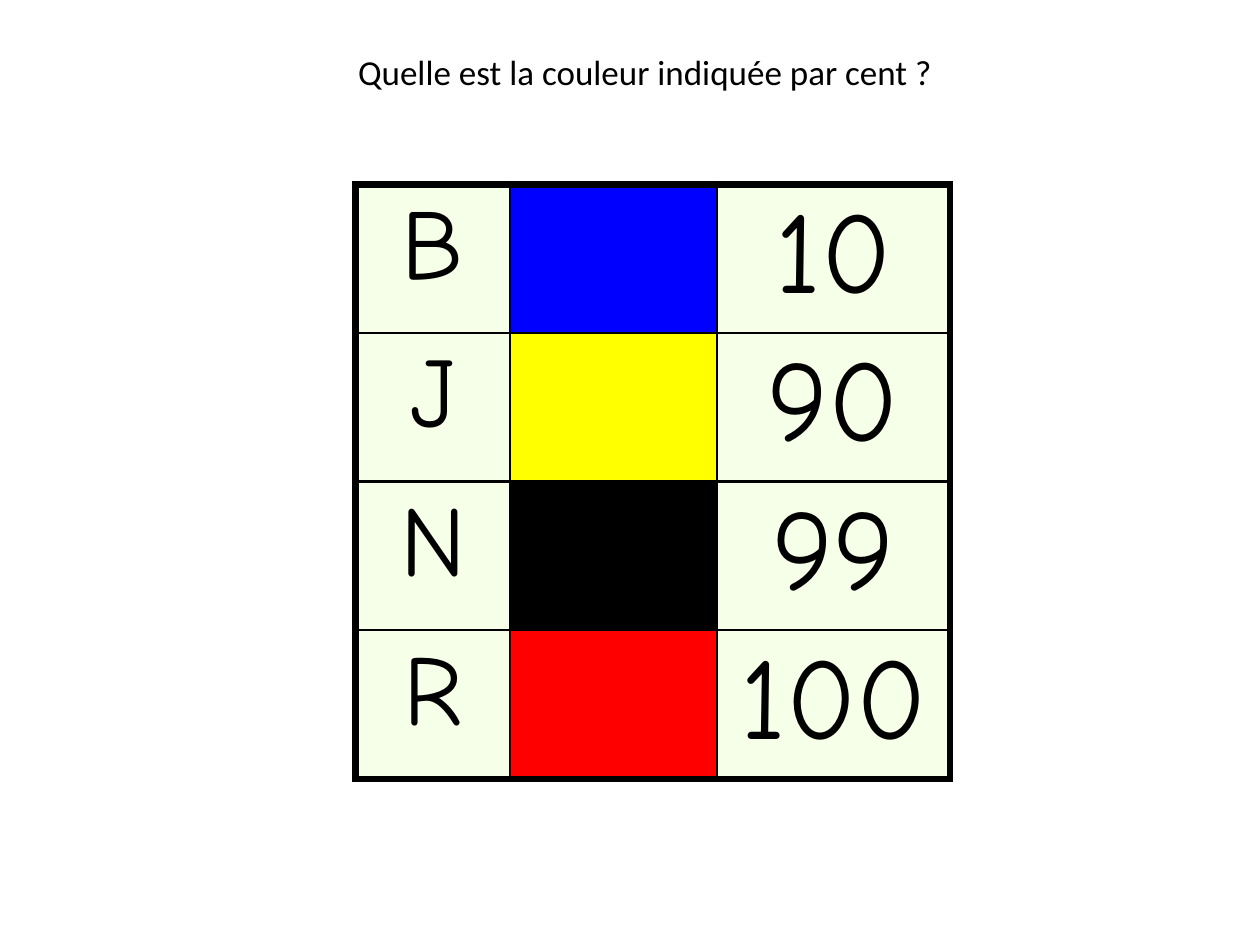
from lxml import etree
from pptx import Presentation, util as u
from pptx.dml.color import RGBColor
from pptx.enum import text
from pptx.oxml.ns import qn

BLACK = RGBColor(0x00, 0x00, 0x00)
CREAM = RGBColor(0xF6, 0xFF, 0xE8)
BLUE = RGBColor(0x00, 0x00, 0xFF)
YELLOW = RGBColor(0xFF, 0xFF, 0x00)
RED = RGBColor(0xFF, 0x00, 0x00)

CHOICES = [("B", BLUE, "10"), ("J", YELLOW, "90"), ("N", BLACK, "99"), ("R", RED, "100")]
COLUMN_WIDTHS = [1.23, 1.64, 1.85]
ROW_HEIGHTS = [1.06, 1.18, 1.18, 1.18]


class QuizSlide:
    """Hold the quiz style and the slide being filled, placed in percent of its size."""

    question_font, answer_font = "Calibri", "Comic Neue"
    question_size, letter_size, number_size = 20, 57, 66
    outer_line, inner_line = 4.5, 1.5

    def __init__(self, deck):
        self.width, self.height = deck.slide_width, deck.slide_height
        self.slide = deck.slides.add_slide(deck.slide_layouts[5])

    def across(self, percent):
        return int(self.width * percent / 100)

    def down(self, percent):
        return int(self.height * percent / 100)

    def centred(self, frame, words, font, size):
        frame.text = words
        paragraph = frame.paragraphs[0]
        paragraph.alignment = text.PP_ALIGN.CENTER
        for run in paragraph.runs:
            run.font.name, run.font.size = font, u.Pt(size)
            run.font.color.rgb = BLACK

    def question(self, words, left, top, width, height):
        title = self.slide.shapes.title
        title.left, title.top = self.across(left), self.down(top)
        title.width, title.height = self.across(width), self.down(height)
        frame = title.text_frame
        self.centred(frame, words, self.question_font, self.question_size)
        frame.word_wrap = True
        frame.auto_size = text.MSO_AUTO_SIZE.SHAPE_TO_FIT_TEXT
        frame.vertical_anchor = text.MSO_ANCHOR.TOP

    def borders(self, cell, outer_sides):
        properties = cell._tc.get_or_add_tcPr()
        for position, side in enumerate("LRTB"):
            points = self.outer_line if side in outer_sides else self.inner_line
            line = etree.Element(qn(f"a:ln{side}"), w=str(int(u.Pt(points))))
            solid = etree.SubElement(line, qn("a:solidFill"))
            etree.SubElement(solid, qn("a:srgbClr"), val=str(BLACK))
            properties.insert(position, line)

    def choices(self, rows, left, top):
        width, height = u.Inches(sum(COLUMN_WIDTHS)), u.Inches(sum(ROW_HEIGHTS))
        grid = self.slide.shapes.add_table(
            len(rows), len(COLUMN_WIDTHS), self.across(left), self.down(top), width, height
        ).table
        grid.first_row = grid.horz_banding = False
        for column, inches in zip(grid.columns, COLUMN_WIDTHS):
            column.width = u.Inches(inches)
        for row, inches in zip(grid.rows, ROW_HEIGHTS):
            row.height = u.Inches(inches)
        last_row, last_column = len(rows) - 1, len(COLUMN_WIDTHS) - 1
        for r, (letter, color, number) in enumerate(rows):
            contents = [
                (letter, self.letter_size, CREAM),
                ("", None, color),
                (number, self.number_size, CREAM),
            ]
            for c, (words, size, fill) in enumerate(contents):
                cell = grid.cell(r, c)
                cell.margin_left = cell.margin_right = u.Inches(0.08)
                cell.margin_top = cell.margin_bottom = u.Inches(0.04)
                cell.fill.solid()
                cell.fill.fore_color.rgb = fill
                if words:
                    self.centred(cell.text_frame, words, self.answer_font, size)
                edges = {"L": c == 0, "R": c == last_column, "T": r == 0, "B": r == last_row}
                self.borders(cell, [side for side, outer in edges.items() if outer])


def main():
    deck = Presentation()
    deck.slide_width, deck.slide_height = u.Inches(10), u.Inches(7.5)
    quiz = QuizSlide(deck)
    quiz.question("Quelle est la couleur indiquée par cent ?", 20.3, 4.7, 61.8, 5.9)
    quiz.choices(CHOICES, 28.2, 19.5)
    deck.save("out.pptx")


if __name__ == "__main__":
    main()
